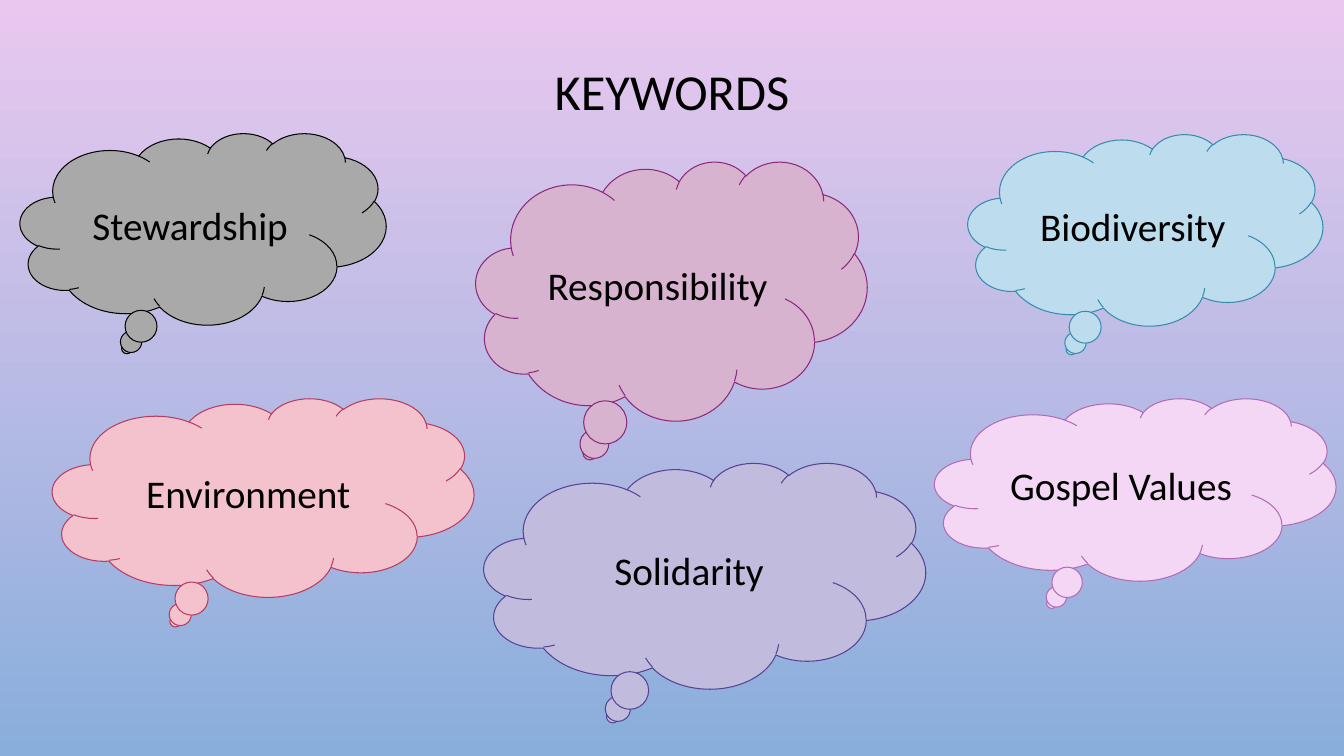
from pptx import Presentation
from pptx.dml.color import RGBColor
from pptx.enum.shapes import MSO_SHAPE
from pptx.enum.text import MSO_ANCHOR, PP_ALIGN
from pptx.util import Pt

SCALE = 9144  # EMU in one px, 100 px to the inch
WIDE, HIGH = 1333, 750

BLACK = RGBColor(0x00, 0x00, 0x00)
GREY = RGBColor(0xA9, 0xA9, 0xA9)
MAUVE = RGBColor(0xD8, 0xB3, 0xD0)
PLUM = RGBColor(0x8A, 0x29, 0x7B)
LILAC = RGBColor(0xC1, 0xBC, 0xDE)
INDIGO = RGBColor(0x54, 0x42, 0x93)
BLUSH = RGBColor(0xF4, 0xD7, 0xF5)
ORCHID = RGBColor(0xB2, 0x6B, 0xB4)
ICE = RGBColor(0xBD, 0xDD, 0xEE)
TEAL = RGBColor(0x36, 0x8C, 0xAB)
ROSE = RGBColor(0xF4, 0xC2, 0xCD)
CRIMSON = RGBColor(0xB6, 0x3C, 0x62)
PINK = RGBColor(0xE9, 0xC8, 0xEF)
SKY = RGBColor(0x89, 0xAE, 0xDB)

TITLE_BOX = (100, 27, 1133, 133)
CLOUDS = [
    ("Stewardship", (20, 132, 363, 190), GREY, BLACK),
    ("Responsibility", (472, 160, 388, 257), MAUVE, PLUM),
    ("Solidarity", (480, 459, 438, 224), LILAC, INDIGO),
    ("Gospel Values", (927, 395, 398, 181), BLUSH, ORCHID),
    ("Biodiversity", (960, 133, 352, 190), ICE, TEAL),
    ("Environment", (52, 395, 418, 197), ROSE, CRIMSON),
]


def px(count):
    return count * SCALE


def write(shape, text, size=28, color=BLACK, spacing=None):
    frame = shape.text_frame
    frame.word_wrap = True
    frame.vertical_anchor = MSO_ANCHOR.MIDDLE
    frame.text = text
    para = frame.paragraphs[0]
    para.alignment = PP_ALIGN.CENTER
    para.line_spacing = spacing
    font = para.runs[0].font
    font.name = "Calibri"
    font.size = Pt(size)
    font.color.rgb = color


def paint(slide):
    """Fill the background with pink at the top fading to blue."""
    fill = slide.background.fill
    fill.gradient()
    fill.gradient_angle = 270
    for stop, color in zip(fill.gradient_stops, (PINK, SKY)):
        stop.color.rgb = color


def head(slide, box, text):
    title = slide.shapes.title
    title.left, title.top, title.width, title.height = map(px, box)
    write(title, text, size=36, spacing=0.9)


def cloud(slide, text, box, fill, line):
    shape = slide.shapes.add_shape(MSO_SHAPE.CLOUD_CALLOUT, *map(px, box))
    shape.shadow.inherit = False
    shape.fill.solid()
    shape.fill.fore_color.rgb = fill
    shape.line.color.rgb = line
    shape.line.width = Pt(0.75)
    write(shape, text)


def main():
    deck = Presentation()
    deck.slide_width, deck.slide_height = px(WIDE), px(HIGH)
    slide = deck.slides.add_slide(deck.slide_layouts[5])
    paint(slide)
    head(slide, TITLE_BOX, "KEYWORDS")
    for item in CLOUDS:
        cloud(slide, *item)
    deck.save("out.pptx")


if __name__ == "__main__":
    main()
